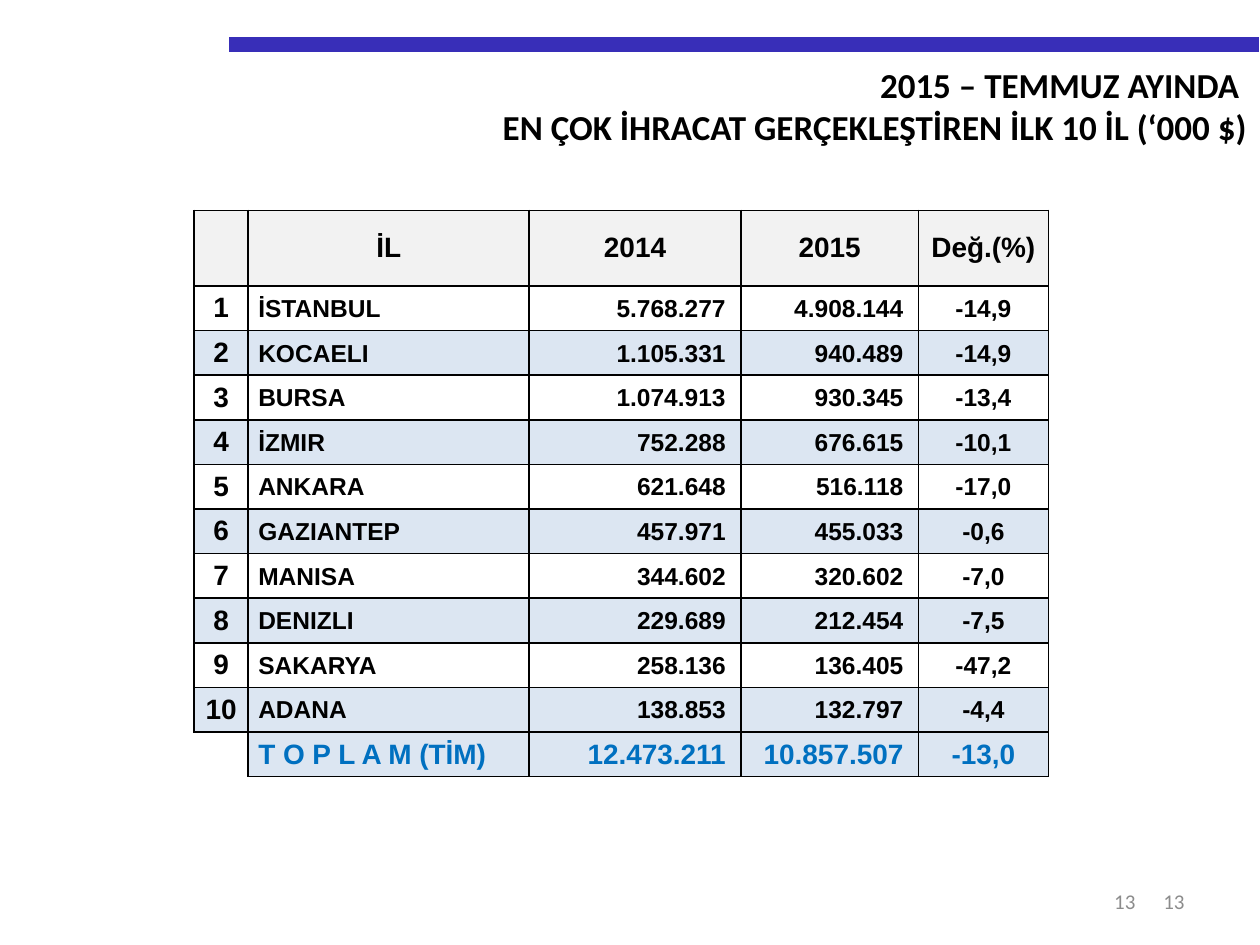
from lxml import etree
from pptx import Presentation
from pptx.dml.color import RGBColor
from pptx.enum.shapes import MSO_CONNECTOR
from pptx.enum.text import MSO_ANCHOR, MSO_AUTO_SIZE, PP_ALIGN
from pptx.oxml.ns import qn
from pptx.util import Inches, Pt

LEFT, CENTER, RIGHT = PP_ALIGN.LEFT, PP_ALIGN.CENTER, PP_ALIGN.RIGHT
TOP, MIDDLE = MSO_ANCHOR.TOP, MSO_ANCHOR.MIDDLE
NO_AUTOFIT = MSO_AUTO_SIZE.NONE
STRAIGHT = MSO_CONNECTOR.STRAIGHT
TITLE_ONLY = 5

BLACK, GREY, BLUE, BAR = "000000", "8C8C8C", "0070C0", "382EB8"
HEADER_FILL, BAND_FILL = "F2F2F2", "DCE6F2"

COLUMN_WIDTHS = [0.43, 2.23, 1.68, 1.41, 1.03]
HEADER_HEIGHT, ROW_HEIGHT = 0.6, 0.354
BODY_ALIGNMENTS = [CENTER, LEFT, RIGHT, RIGHT, CENTER]
HEADER_MARGINS = (0.1, 0.05, 0.1, 0.05)
BODY_MARGINS = [
    (0, 0, 0, 0),
    (0.08, 0.01, 0.01, 0),
    (0.01, 0.01, 0.12, 0),
    (0.01, 0.01, 0.12, 0),
    (0.01, 0.01, 0.01, 0),
]

TITLE_LINES = ["2015 – TEMMUZ AYINDA ", "EN ÇOK İHRACAT GERÇEKLEŞTİREN İLK 10 İL (‘000 $)"]
HEADER = ["", "İL", "2014", "2015", "Değ.(%)"]
PROVINCES = [
    ["İSTANBUL", "5.768.277", "4.908.144", "-14,9"],
    ["KOCAELI", "1.105.331", "940.489", "-14,9"],
    ["BURSA", "1.074.913", "930.345", "-13,4"],
    ["İZMIR", "752.288", "676.615", "-10,1"],
    ["ANKARA", "621.648", "516.118", "-17,0"],
    ["GAZIANTEP", "457.971", "455.033", "-0,6"],
    ["MANISA", "344.602", "320.602", "-7,0"],
    ["DENIZLI", "229.689", "212.454", "-7,5"],
    ["SAKARYA", "258.136", "136.405", "-47,2"],
    ["ADANA", "138.853", "132.797", "-4,4"],
]
TOTAL = ["", "T O P L A M (TİM)", "12.473.211", "10.857.507", "-13,0"]


def color(value):
    return RGBColor.from_string(value)


def format_paragraph(paragraph, alignment, font_color, **font_values):
    paragraph.alignment = alignment
    for name, value in font_values.items():
        setattr(paragraph.font, name, value)
    paragraph.font.color.rgb = color(font_color)


def add_bar(slide, start, end, top):
    connector = slide.shapes.add_connector(
        STRAIGHT, Inches(start), Inches(top), Inches(end), Inches(top))
    connector.line.color.rgb = color(BAR)
    connector.line.width = Pt(8.5)
    properties = connector._element.find(qn("p:spPr"))
    etree.SubElement(properties, qn("a:effectLst"))


def set_title(slide, left, top, width, height):
    title = slide.shapes.title
    title.left, title.top = Inches(left), Inches(top)
    title.width, title.height = Inches(width), Inches(height)
    frame = title.text_frame
    frame.text = "\n".join(TITLE_LINES)
    frame.word_wrap = True
    frame.vertical_anchor = TOP
    frame.auto_size = NO_AUTOFIT
    for paragraph in frame.paragraphs:
        format_paragraph(paragraph, RIGHT, BLACK, name="Calibri", size=Pt(20), bold=True)


def add_page_number(slide, left, width):
    box = slide.shapes.add_textbox(Inches(left), Inches(6.95), Inches(width), Inches(0.4))
    frame = box.text_frame
    frame.word_wrap = True
    frame.vertical_anchor = MIDDLE
    frame.text = "13"
    format_paragraph(frame.paragraphs[0], RIGHT, GREY, name="Calibri", size=Pt(12))


def set_borders(cell, visible_sides):
    properties = cell._tc.get_or_add_tcPr()
    for position, side in enumerate("LRTB"):
        line = etree.Element(qn(f"a:ln{side}"), w=str(Pt(1)))
        if side in visible_sides:
            fill = etree.SubElement(line, qn("a:solidFill"))
            etree.SubElement(fill, qn("a:srgbClr"), val=BLACK)
        else:
            etree.SubElement(line, qn("a:noFill"))
        properties.insert(position, line)


def fill_cell(cell, text, alignment, margins, size, font_color, fill):
    cell.text = text
    cell.vertical_anchor = MIDDLE
    for side, margin in zip(("left", "top", "right", "bottom"), margins):
        setattr(cell, f"margin_{side}", Inches(margin))
    format_paragraph(cell.text_frame.paragraphs[0], alignment, font_color,
                     name="Arial", size=Pt(size), bold=True)
    if fill:
        cell.fill.solid()
        cell.fill.fore_color.rgb = color(fill)
    else:
        cell.fill.background()


def add_export_table(slide, left, top):
    ranked = [[str(rank), *values] for rank, values in enumerate(PROVINCES, 1)]
    rows = [HEADER, *ranked, TOTAL]
    total_row = len(rows) - 1
    height = HEADER_HEIGHT + ROW_HEIGHT * total_row
    table = slide.shapes.add_table(
        len(rows), len(HEADER), Inches(left), Inches(top),
        Inches(sum(COLUMN_WIDTHS)), Inches(height)).table
    table.horz_banding = False
    table.first_row = False
    for column, width in zip(table.columns, COLUMN_WIDTHS):
        column.width = Inches(width)
    for row_index, values in enumerate(rows):
        is_header, is_total = row_index == 0, row_index == total_row
        table.rows[row_index].height = Inches(HEADER_HEIGHT if is_header else ROW_HEIGHT)
        for column_index, text in enumerate(values):
            is_blank_corner = is_total and column_index == 0
            if is_header:
                fill = HEADER_FILL
            elif is_blank_corner:
                fill = None
            else:
                fill = BAND_FILL if is_total or row_index % 2 == 0 else None
            cell = table.cell(row_index, column_index)
            fill_cell(
                cell, text,
                CENTER if is_header else BODY_ALIGNMENTS[column_index],
                HEADER_MARGINS if is_header else BODY_MARGINS[column_index],
                16 if is_header or is_total or column_index == 0 else 14,
                BLUE if is_total else BLACK, fill)
            set_borders(cell, "RT" if is_blank_corner else "LRTB")


def main():
    presentation = Presentation()
    presentation.slide_width, presentation.slide_height = Inches(10), Inches(7.5)
    slide = presentation.slides.add_slide(presentation.slide_layouts[TITLE_ONLY])
    add_page_number(slide, 7.17, 2.33)
    add_bar(slide, 1.82, 9.99, 0.35)
    add_page_number(slide, 7.01, 2.1)
    set_title(slide, 1.06, 0.45, 8.94, 0.77)
    add_export_table(slide, 1.54, 1.67)
    presentation.save("out.pptx")


if __name__ == "__main__":
    main()
